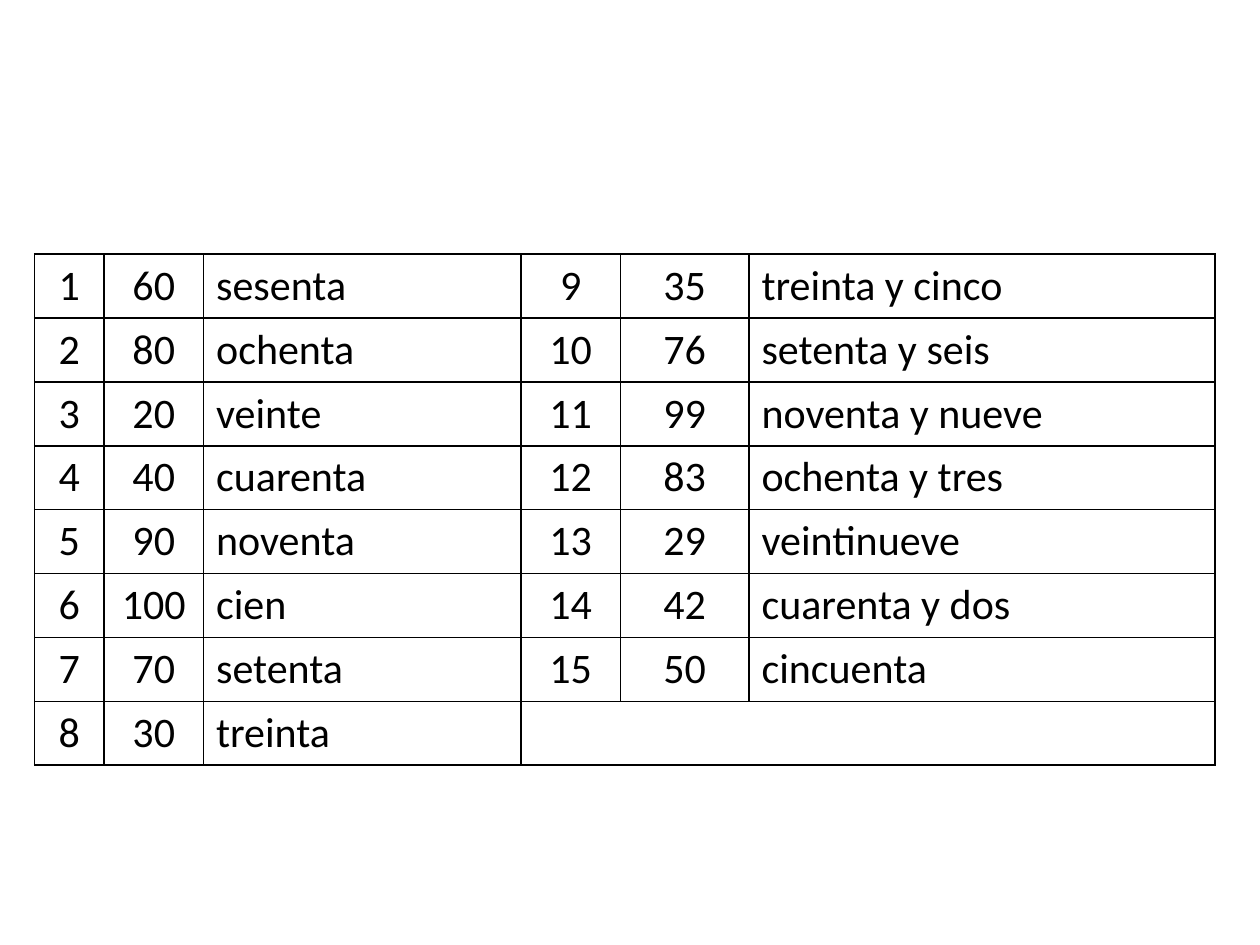
"""Build a slide with a table of Spanish numbers and their names."""
import pptx
import pptx.util
import pptx.dml.color
import pptx.enum.text
import pptx.oxml

Pt = pptx.util.Pt
COLORS = {"ink": "000000"}
NUMBERS = [
    (60, "sesenta"), (80, "ochenta"), (20, "veinte"), (40, "cuarenta"),
    (90, "noventa"), (100, "cien"), (70, "setenta"), (30, "treinta"),
    (35, "treinta y cinco"), (76, "setenta y seis"), (99, "noventa y nueve"),
    (83, "ochenta y tres"), (29, "veintinueve"), (42, "cuarenta y dos"),
    (50, "cincuenta"),
]
ROWS = 8
ROW_HEIGHT = 36.5
COL_WIDTHS = [39.6, 56.9, 181.4, 56.9, 73.4, 266.4]
LEFT, TOP = 19.8, 145.2


def write(cell, text, *, size=24, font="Calibri", color="ink", centered=True):
    p = cell.text_frame.paragraphs[0]
    align = pptx.enum.text.PP_ALIGN
    p.alignment = align.CENTER if centered else align.LEFT
    r = p.add_run()
    r.text = text
    r.font.size = Pt(size)
    r.font.name = font
    r.font.color.rgb = pptx.dml.color.RGBColor.from_string(COLORS[color])


def style_cell(cell, width=1):
    cell.fill.background()
    cell.vertical_anchor = pptx.enum.text.MSO_ANCHOR.MIDDLE
    props = cell._tc.get_or_add_tcPr()
    for i, side in enumerate("LRTB"):
        props.insert(i, pptx.oxml.parse_xml(
            f'<a:ln{side} xmlns:a="http://schemas.openxmlformats.org/drawingml/2006/main"'
            f' w="{Pt(width)}"><a:solidFill><a:srgbClr val="{COLORS["ink"]}"/>'
            f'</a:solidFill></a:ln{side}>'))


def main():
    prs = pptx.Presentation()
    prs.slide_width, prs.slide_height = Pt(720), Pt(540)
    s = prs.slides.add_slide(prs.slide_layouts[6])
    table = s.shapes.add_table(ROWS, len(COL_WIDTHS), Pt(LEFT), Pt(TOP),
                               Pt(sum(COL_WIDTHS)), Pt(ROWS * ROW_HEIGHT)).table
    table.first_row = table.horz_banding = False
    for column, width in zip(table.columns, COL_WIDTHS):
        column.width = Pt(width)
    for row in table.rows:
        row.height = Pt(ROW_HEIGHT)
    for cell in table.iter_cells():
        style_cell(cell)
    table.cell(ROWS - 1, 3).merge(table.cell(ROWS - 1, 5))

    for i, (number, name) in enumerate(NUMBERS):
        half, row = divmod(i, ROWS)
        for j, text in enumerate((str(i + 1), str(number), name)):
            write(table.cell(row, half * 3 + j), text, centered=j < 2)
    prs.save("out.pptx")


if __name__ == "__main__":
    main()
